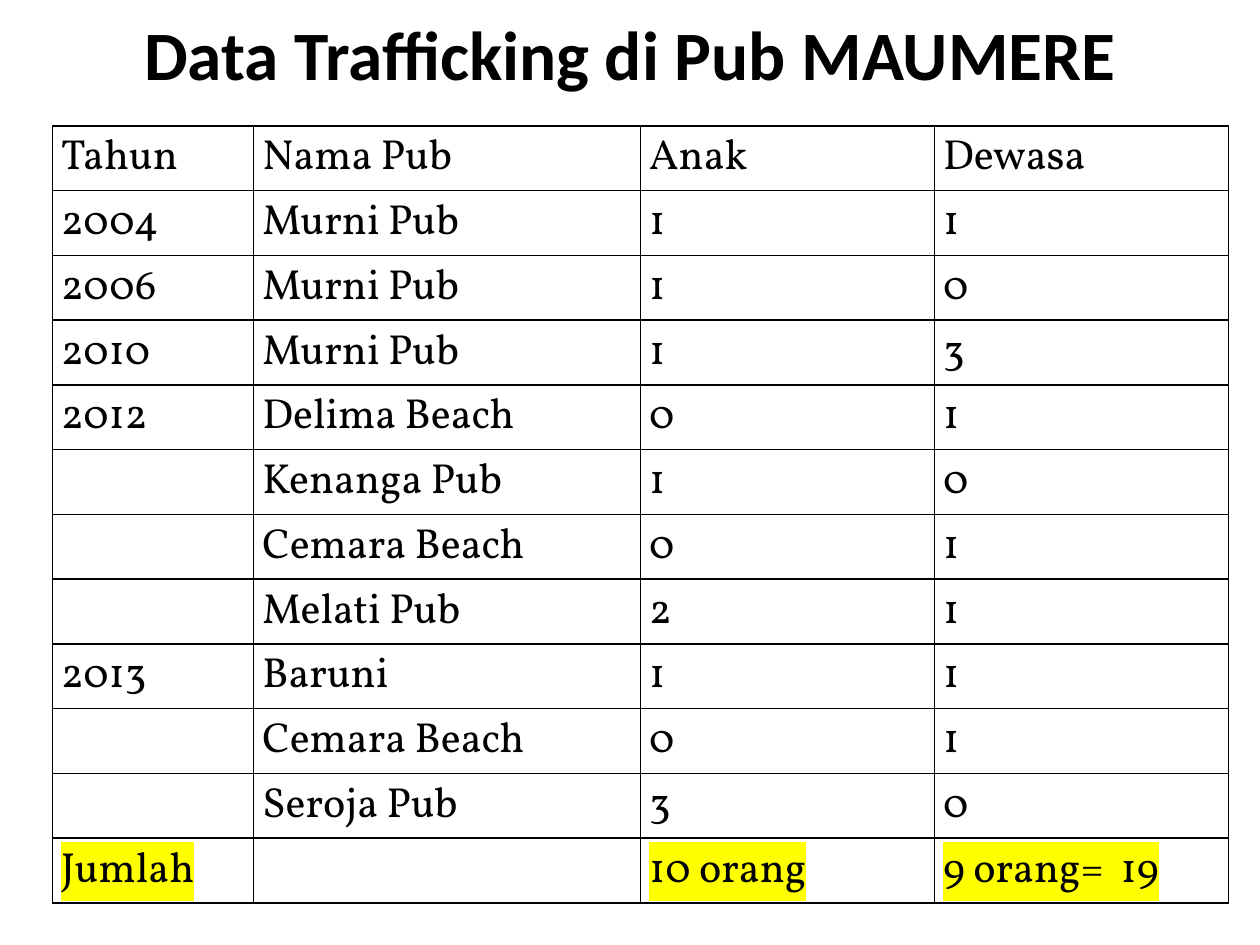
"""Build a slide with a ruled table of trafficking cases per pub in Maumere."""
from lxml import etree
from pptx import Presentation
from pptx.dml.color import RGBColor
from pptx.enum import text
from pptx.oxml import ns
from pptx.util import Pt

TITLE = "Data Trafficking di Pub MAUMERE"
HEADER = ("Tahun", "Nama Pub", "Anak", "Dewasa")
CASES = [
    ("2004", "Murni Pub", "1", "1"),
    ("2006", "Murni Pub", "1", "0"),
    ("2010", "Murni Pub", "1", "3"),
    ("2012", "Delima Beach", "0", "1"),
    ("", "Kenanga Pub", "1", "0"),
    ("", "Cemara Beach", "0", "1"),
    ("", "Melati Pub", "2", "1"),
    ("2013", "Baruni", "1", "1"),
    ("", "Cemara Beach", "0", "1"),
    ("", "Seroja Pub", "3", "0"),
]
TOTAL = ("Jumlah", "", "10 orang", "9 orang=  19")
ROWS = [HEADER, *CASES, TOTAL]

COLUMN_WIDTHS = (115, 221, 168, 168)
ROW_HEIGHT = 37
BLACK = RGBColor(0, 0, 0)
YELLOW = RGBColor(255, 255, 0)


def add_color(parent, tag, color):
    holder = etree.SubElement(parent, ns.qn(tag))
    etree.SubElement(holder, ns.qn("a:srgbClr"), val=str(color))
    return holder


def style_run(run, size, font_name):
    run.font.size = Pt(size)
    run.font.name = font_name
    run.font.color.rgb = BLACK


def highlight(run):
    properties = run.font.fill._xPr
    marker = add_color(properties, "a:highlight", YELLOW)
    properties.find(ns.qn("a:solidFill")).addnext(marker)


def rule_cell(cell):
    properties = cell._tc.get_or_add_tcPr()
    for position, side in enumerate(("a:lnL", "a:lnR", "a:lnT", "a:lnB")):
        border = etree.Element(ns.qn(side), w=str(Pt(1)))
        add_color(border, "a:solidFill", BLACK)
        properties.insert(position, border)


def fill_cell(cell, wording, is_total):
    cell.fill.background()
    cell.margin_left = cell.margin_right = Pt(5)
    cell.margin_top = cell.margin_bottom = 0
    rule_cell(cell)
    entry = cell.text_frame.paragraphs[0]
    entry.text = wording
    entry.alignment = text.PP_ALIGN.JUSTIFY
    entry.line_spacing = 1.07
    for run in entry.runs:
        style_run(run, 24, "Vollkorn")
        if is_total:
            highlight(run)


def add_title(slide):
    title = slide.shapes.title
    title.left, title.top, title.width, title.height = Pt(36), Pt(12), Pt(648), Pt(36)
    title.text_frame.text = TITLE
    title.text_frame.vertical_anchor = text.MSO_ANCHOR.MIDDLE
    heading = title.text_frame.paragraphs[0]
    heading.alignment = text.PP_ALIGN.CENTER
    style_run(heading.runs[0], 39.6, "Calibri")
    heading.runs[0].font.bold = True


def add_cases(slide):
    cases = slide.shapes.add_table(
        len(ROWS), len(HEADER), Pt(30), Pt(72),
        Pt(sum(COLUMN_WIDTHS)), Pt(ROW_HEIGHT * len(ROWS)),
    ).table
    cases.first_row = cases.horz_banding = False
    for column, width in zip(cases.columns, COLUMN_WIDTHS):
        column.width = Pt(width)
    for row, entries in zip(cases.rows, ROWS):
        row.height = Pt(ROW_HEIGHT)
        for cell, wording in zip(row.cells, entries):
            fill_cell(cell, wording, entries is TOTAL)


def main():
    deck = Presentation()
    deck.slide_width, deck.slide_height = Pt(720), Pt(540)
    slide = deck.slides.add_slide(deck.slide_layouts[5])
    add_title(slide)
    add_cases(slide)
    deck.save("out.pptx")


if __name__ == "__main__":
    main()
